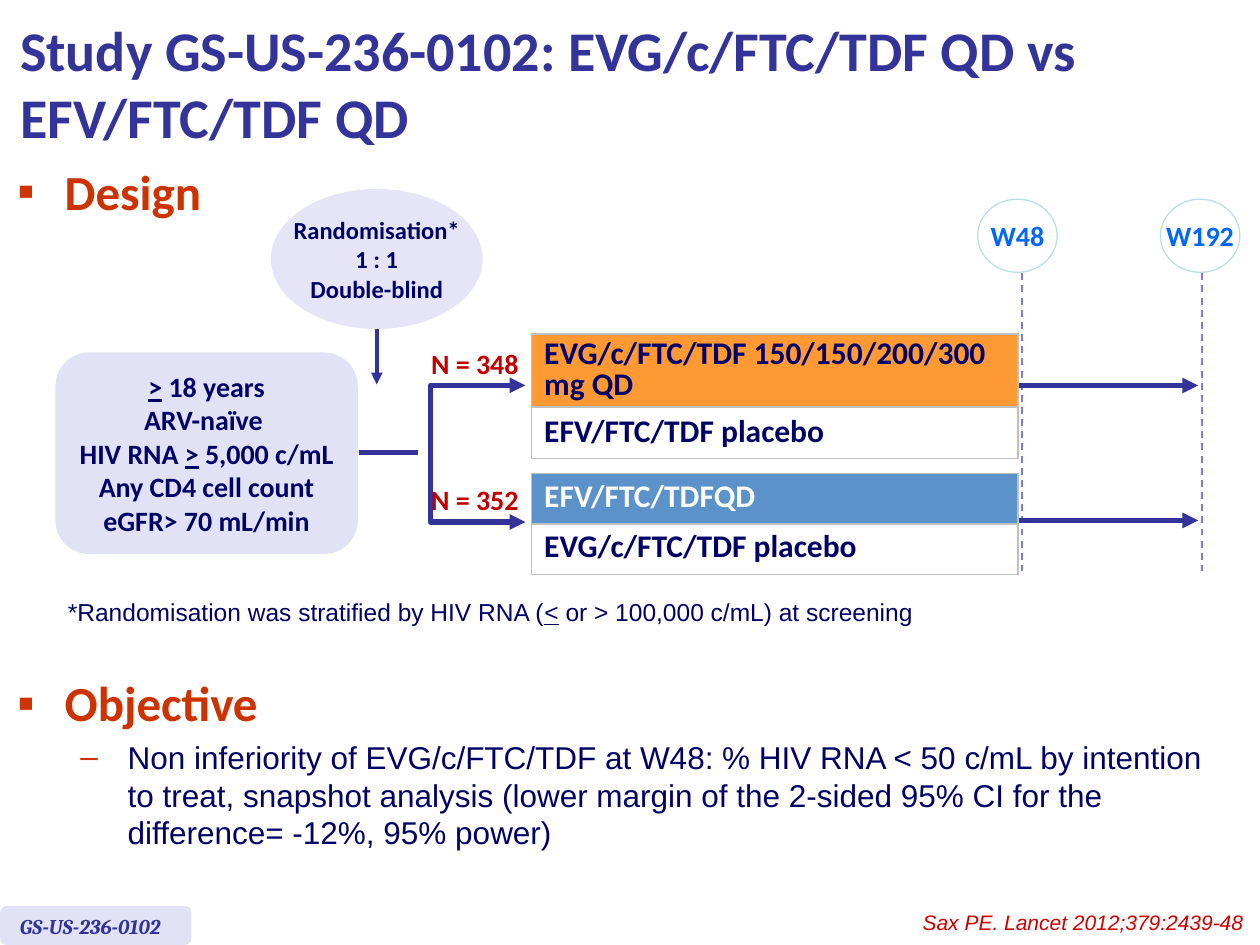
from lxml.etree import SubElement
from pptx import Presentation
from pptx.dml.color import RGBColor
from pptx.enum.dml import MSO_LINE
from pptx.enum.shapes import MSO_CONNECTOR, MSO_SHAPE
from pptx.enum.text import MSO_ANCHOR, PP_ALIGN
from pptx.oxml.ns import qn
from pptx.util import Pt

NAVY, BLUE, RED, RUST = "000066", "333399", "C00000", "CC3300"
LEFT, MID, RIGHT = PP_ALIGN.LEFT, PP_ALIGN.CENTER, PP_ALIGN.RIGHT
hue = RGBColor.from_string


def write(frame, text, size, color, face="Calibri", bold=True,
          italic=False, align=LEFT, wrap=True):
    frame.word_wrap = wrap
    for i, row in enumerate(text.split("\n")):
        para = frame.paragraphs[0] if i == 0 else frame.add_paragraph()
        para.alignment = align
        for j, part in enumerate(row.split("_")):
            run = para.add_run()
            run.text = part
            font = run.font
            font.name, font.size = face, Pt(size)
            font.bold, font.italic = bold, italic
            font.underline = j % 2 == 1
            font.color.rgb = hue(color)


def stroke(shape, color, width, ends=()):
    shape.line.color.rgb = hue(color)
    shape.line.width = Pt(width)
    line = shape.line._get_or_add_ln()
    for end in ends:
        SubElement(line, qn("a:" + end), type="triangle")
    if shape._element.spPr.find(qn("a:effectLst")) is None:
        SubElement(shape._element.spPr, qn("a:effectLst"))


deck = Presentation()
deck.slide_width, deck.slide_height = Pt(720), Pt(540)
slide = deck.slides.add_slide(deck.slide_layouts[5])
shapes = slide.shapes

title = shapes.title
title.left, title.top, title.width, title.height = Pt(4.3), Pt(3.6), Pt(687.6), Pt(87)
title.text_frame.vertical_anchor = MSO_ANCHOR.MIDDLE
write(title.text_frame, "Study GS-US-236-0102: EVG/c/FTC/TDF QD vs EFV/FTC/TDF QD", 32, BLUE)

lines = [
    (215.3, 188, 215.3, 219.6, BLUE, 2.25, True),
    (205.2, 258.5, 239, 258.5, BLUE, 3, False),
    (686.9, 156.2, 686.9, 326.2, "7E7ED4", 1, False),
    (583.9, 156.2, 583.9, 326.2, "7E7ED4", 1, False),
    (582.5, 220.3, 684.7, 220.3, BLUE, 3, True),
    (582.5, 297.4, 684.7, 297.4, BLUE, 3, True),
]
for x1, y1, x2, y2, color, width, arrow in lines:
    line = shapes.add_connector(MSO_CONNECTOR.STRAIGHT, Pt(x1), Pt(y1), Pt(x2), Pt(y2))
    if width == 1:
        line.line.dash_style = MSO_LINE.DASH
    stroke(line, color, width, ["tailEnd"] if arrow else [])

path = shapes.build_freeform(Pt(300.2), Pt(220.2))
path.add_line_segments([(Pt(246), Pt(220.2)), (Pt(246), Pt(298.3)),
                        (Pt(300.2), Pt(298.3))], close=False)
fork = path.convert_to_shape()
fork.shadow.inherit = False
fork.fill.background()
stroke(fork, BLUE, 3, ["headEnd", "tailEnd"])

OVAL, ROUND = MSO_SHAPE.OVAL, MSO_SHAPE.ROUNDED_RECTANGLE
bubbles = [
    (ROUND, 0, 517.7, 109.4, 22.3, "E2E2F6", None, "", 12, NAVY),
    (OVAL, 154.8, 108, 121, 80, "E5E5F7", None,
     "Randomisation*\n1 : 1\nDouble-blind", 14, NAVY),
    (ROUND, 31.7, 201.4, 172.8, 115.2, "E2E2F6", None,
     "_>_ 18 years\nARV-naïve \nHIV RNA _>_ 5,000 c/mL\nAny CD4 cell count\neGFR> 70 mL/min",
     16, NAVY),
    (OVAL, 558.7, 113.8, 45.4, 41.8, "FFFFFF", "BBE0E3", "W48", 16, "0066FF"),
    (OVAL, 663.1, 113.8, 45.4, 41.8, "FFFFFF", "BBE0E3", "W192", 16, "0066FF"),
]
for kind, x, y, w, h, fill, edge, text, size, color in bubbles:
    shape = shapes.add_shape(kind, Pt(x), Pt(y), Pt(w), Pt(h))
    shape.shadow.inherit = False
    shape.fill.solid()
    shape.fill.fore_color.rgb = hue(fill)
    if edge:
        stroke(shape, edge, 0.75)
    else:
        shape.line.fill.background()
    if text:
        shape.text_frame.vertical_anchor = MSO_ANCHOR.MIDDLE
        write(shape.text_frame, text, size, color, align=MID, wrap=False)

labels = [
    (501.8, 516.2, 216, 21.6, "Sax PE. Lancet 2012;379:2439-48", 12, "CC0000",
     "Arial", False, True, RIGHT, True),
    (4.3, 518.4, 101.5, 21.6, "GS-US-236-0102", 12, BLUE, "Cambria", True, True, LEFT, True),
    (31.7, 337.7, 583.2, 24.5,
     "*Randomisation was stratified by HIV RNA (_<_ or > 100,000 c/mL) at screening",
     14, NAVY, "Arial", False, False, LEFT, True),
    (239, 194.4, 64.8, 26.6, "N = 348", 16, RED, "Calibri", True, False, MID, False),
    (239, 272.2, 64.8, 26.6, "N = 352", 16, RED, "Calibri", True, False, MID, False),
]
for x, y, w, h, *rest in labels:
    box = shapes.add_textbox(Pt(x), Pt(y), Pt(w), Pt(h))
    write(box.text_frame, *rest)

goal = ("Non inferiority of EVG/c/FTC/TDF at W48: % HIV RNA < 50 c/mL by intention\v"
        "to treat, snapshot analysis (lower margin of the 2-sided 95% CI "
        "for the difference= -12%, 95% power)")
heads = [(88.6, 142.6, 45.4, "Design", None), (380.9, 705.6, 113.8, "Objective", goal)]
for y, w, h, head, note in heads:
    frame = shapes.add_textbox(Pt(2.9), Pt(y), Pt(w), Pt(h)).text_frame
    frame.word_wrap = True
    items = [(head, "▪", 27, 28, RUST, "Calibri", True)]
    if note:
        items.append((note, "–", 63, 18, NAVY, "Arial", False))
    for i, (text, mark, indent, size, color, face, bold) in enumerate(items):
        para = frame.add_paragraph() if i else frame.paragraphs[0]
        para.text = text
        para.level = i
        if i:
            para.space_before = Pt(3.6)
        props = para._p.get_or_add_pPr()
        props.set("marL", str(Pt(indent)))
        props.set("indent", str(-Pt(27)))
        tint = SubElement(props, qn("a:buClr"))
        SubElement(tint, qn("a:srgbClr"), val=RUST)
        SubElement(props, qn("a:buFont"), typeface="Arial")
        SubElement(props, qn("a:buChar"), char=mark)
        for run in para.runs:
            run.font.name, run.font.size, run.font.bold = face, Pt(size), bold
            run.font.color.rgb = hue(color)

arms = [
    (190.8, 0.8, [("EVG/c/FTC/TDF 150/150/200/300 mg QD", 41.8, "FF9933", NAVY),
                  ("EFV/FTC/TDF placebo", 29.5, "FFFFFF", NAVY)]),
    (270.7, 0.7, [("EFV/FTC/TDFQD", 28.8, "5B92C9", "FFFFFF"),
                  ("EVG/c/FTC/TDF placebo", 28.8, "FFFFFF", NAVY)]),
]
for y, space, rows in arms:
    high = sum(row[1] for row in rows)
    table = shapes.add_table(2, 1, Pt(303.8), Pt(y), Pt(278), Pt(high)).table
    table.first_row = table.horz_banding = False
    for i, (text, tall, fill, color) in enumerate(rows):
        table.rows[i].height = Pt(tall)
        cell = table.cell(i, 0)
        cell.vertical_anchor = MSO_ANCHOR.MIDDLE
        write(cell.text_frame, text, 18, color)
        cell.text_frame.paragraphs[0].line_spacing = space
        for side in ("lnL", "lnR", "lnT", "lnB"):
            edge = SubElement(cell._tc.get_or_add_tcPr(), qn("a:" + side), w=str(Pt(1)))
            SubElement(SubElement(edge, qn("a:solidFill")), qn("a:srgbClr"), val="C0C0C0")
        cell.fill.solid()
        cell.fill.fore_color.rgb = hue(fill)

deck.save("out.pptx")
